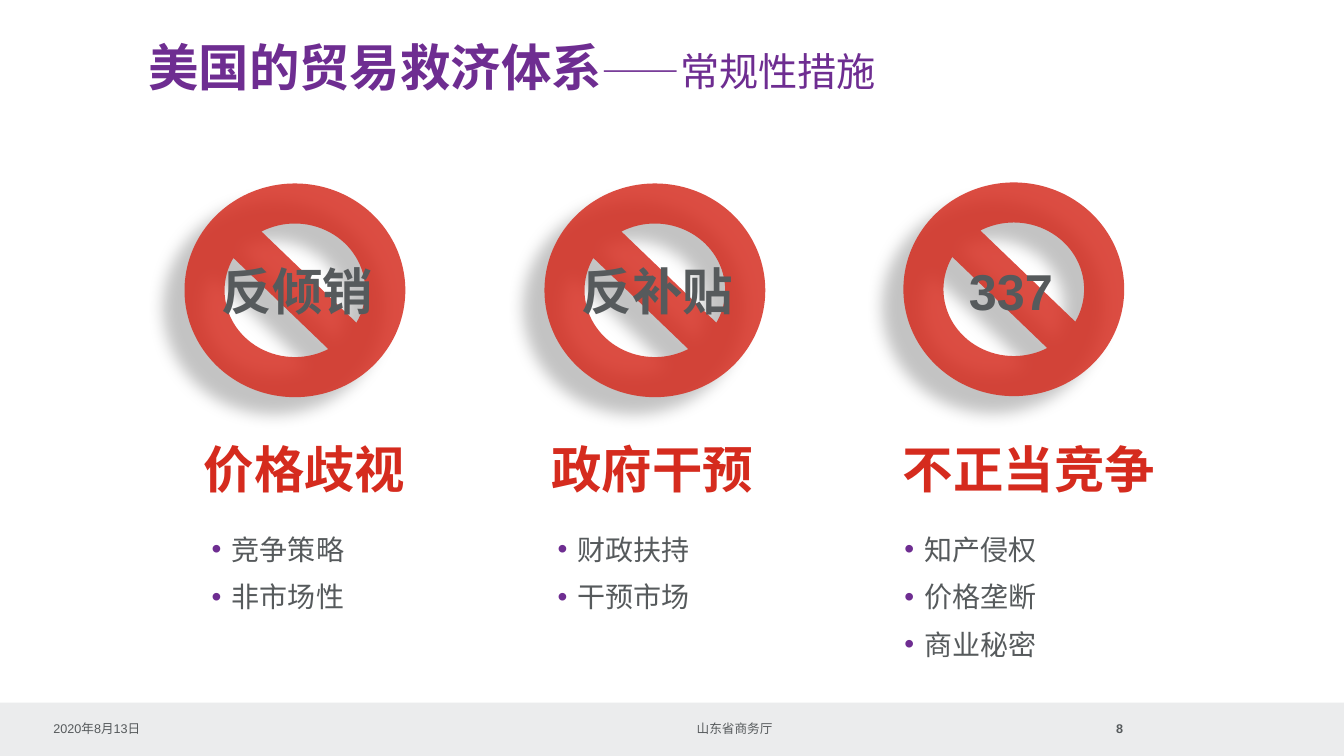
from lxml.etree import SubElement
from pptx import Presentation
from pptx.dml.color import RGBColor
from pptx.enum.shapes import MSO_SHAPE
from pptx.enum.text import MSO_ANCHOR, PP_ALIGN
from pptx.oxml.ns import qn
from pptx.util import Inches, Pt

PURPLE, RED, GRAY, PALE = "6E2D91", "D52B1E", "565A5C", "EBECED"
CJK = "Noto Sans CJK SC"

# sign left, top; name, left, width; heading, left, width; list left, items
COLUMNS = [
    ((1.83, 1.82), ("反倾销", 2.1, 1.72), ("价格歧视", 1.91, 2.22),
     (2.1, ["竞争策略", "非市场性"])),
    ((5.4, 1.82), ("反补贴", 5.67, 1.78), ("政府干预", 5.36, 2.22),
     (5.53, ["财政扶持", "干预市场"])),
    ((8.96, 1.81), ("337", 9.51, 1.22), ("不正当竞争", 8.84, 2.73),
     (8.97, ["知产侵权", "价格垄断", "商业秘密"])),
]


def rgb(value):
    return RGBColor.from_string(value)


def add_node(parent, tag, **attrs):
    return SubElement(parent, qn(tag), {k: str(v) for k, v in attrs.items()})


def add_run(p, text, color=GRAY, name=CJK, **fmt):
    r = p.add_run()
    r.text = text
    for key, value in {"name": name, **fmt}.items():
        setattr(r.font, key, value)
    r.font.color.rgb = rgb(color)
    add_node(r.font._element, "a:ea", typeface=CJK)
    return r


def add_box(shapes, left, top, width, height, inset=True, **fmt):
    tf = shapes.add_textbox(*map(Inches, (left, top, width, height))).text_frame
    tf.word_wrap = True
    if not inset:
        tf.margin_left = tf.margin_right = tf.margin_top = tf.margin_bottom = 0
    for key, value in fmt.items():
        setattr(tf, key, value)
    return tf


def add_plain_shape(shapes, kind, left, top, width, height, color):
    sp = shapes.add_shape(kind, *map(Inches, (left, top, width, height)))
    sp.shadow.inherit = False
    sp.fill.solid()
    sp.fill.fore_color.rgb = rgb(color)
    sp.line.fill.background()
    return sp


def add_outlined_text(p, text, **fmt):
    """Large bold text with a thin white outline."""
    r = add_run(p, text, size=Pt(36), bold=True, **fmt)
    ln = add_node(r.font._element, "a:ln", w=Pt(0.75))
    add_node(add_node(ln, "a:solidFill"), "a:srgbClr", val="FFFFFF")
    r.font._element.insert(0, ln)


def add_sign(s, position, name, left, width):
    """Translucent prohibition sign with a soft shadow, grouped with its name."""
    shapes = s.shapes.add_group_shape().shapes
    sp = add_plain_shape(shapes, MSO_SHAPE.NO_SYMBOL, *position, 2.19, 2.12, RED)
    fill = sp._element.spPr.find(qn("a:solidFill"))
    add_node(fill[0], "a:alpha", val=84000)
    effects = sp._element.spPr.find(qn("a:effectLst"))
    shadow = add_node(effects, "a:outerShdw", blurRad=Pt(11.8), dist=Pt(19.7),
                      dir=141 * 60000, algn="ctr", rotWithShape=0)
    add_node(add_node(shadow, "a:srgbClr", val="000000"), "a:alpha", val=28000)
    tf = add_box(shapes, left, 2.53, width, 0.71)
    add_outlined_text(tf.paragraphs[0], name, name="Arial")


def add_heading(s, text, left, width):
    p = add_box(s.shapes, left, 4.3, width, 0.71, word_wrap=False).paragraphs[0]
    p.alignment = PP_ALIGN.CENTER
    add_outlined_text(p, text, color=RED)


def add_bullets(s, left, items):
    tf = add_box(s.shapes, left, 5.28, 1.65, 0.98, inset=False)
    for i, item in enumerate(items):
        p = tf.add_paragraph() if i else tf.paragraphs[0]
        pPr = p._p.get_or_add_pPr()
        pPr.set("marL", str(Inches(0.2)))
        pPr.set("indent", str(Inches(-0.2)))
        add_node(add_node(pPr, "a:buClr"), "a:srgbClr", val=PURPLE)
        add_node(pPr, "a:buFont", typeface="Arial")
        add_node(pPr, "a:buChar", char="•")
        p.space_before = Pt(10 if i else 0)
        add_run(p, item, size=Pt(20))


def add_title(s):
    p = add_box(s.shapes, 1.47, 0.36, 10.1, 0.58, inset=False).paragraphs[0]
    add_run(p, "美国的贸易救济体系", PURPLE, size=Pt(36), bold=True)
    add_run(p, "——常规性措施", PURPLE, size=Pt(28), bold=False)


def add_footer_text(s, text, left, width, align=PP_ALIGN.LEFT, bold=False):
    tf = add_box(s.shapes, left, 7.15, width, 0.16, inset=False,
                 vertical_anchor=MSO_ANCHOR.MIDDLE)
    p = tf.paragraphs[0]
    p.alignment = align
    add_run(p, text, name="Arial", size=Pt(9), bold=bold)


def main():
    prs = Presentation()
    prs.slide_width, prs.slide_height = Inches(13.33), Inches(7.5)
    s = prs.slides.add_slide(prs.slide_layouts[6])
    add_plain_shape(s.shapes, MSO_SHAPE.RECTANGLE, 0, 6.97, 13.33, 0.53, PALE)
    add_title(s)
    add_footer_text(s, "2020年8月13日", 0.53, 3.15)
    add_footer_text(s, "山东省商务厅", 6.91, 3.15)
    add_footer_text(s, "8", 10.93, 0.21, PP_ALIGN.RIGHT, True)
    for position, name, heading, bullets in COLUMNS:
        add_sign(s, position, *name)
        add_heading(s, *heading)
        add_bullets(s, *bullets)
    prs.save("out.pptx")


if __name__ == "__main__":
    main()
